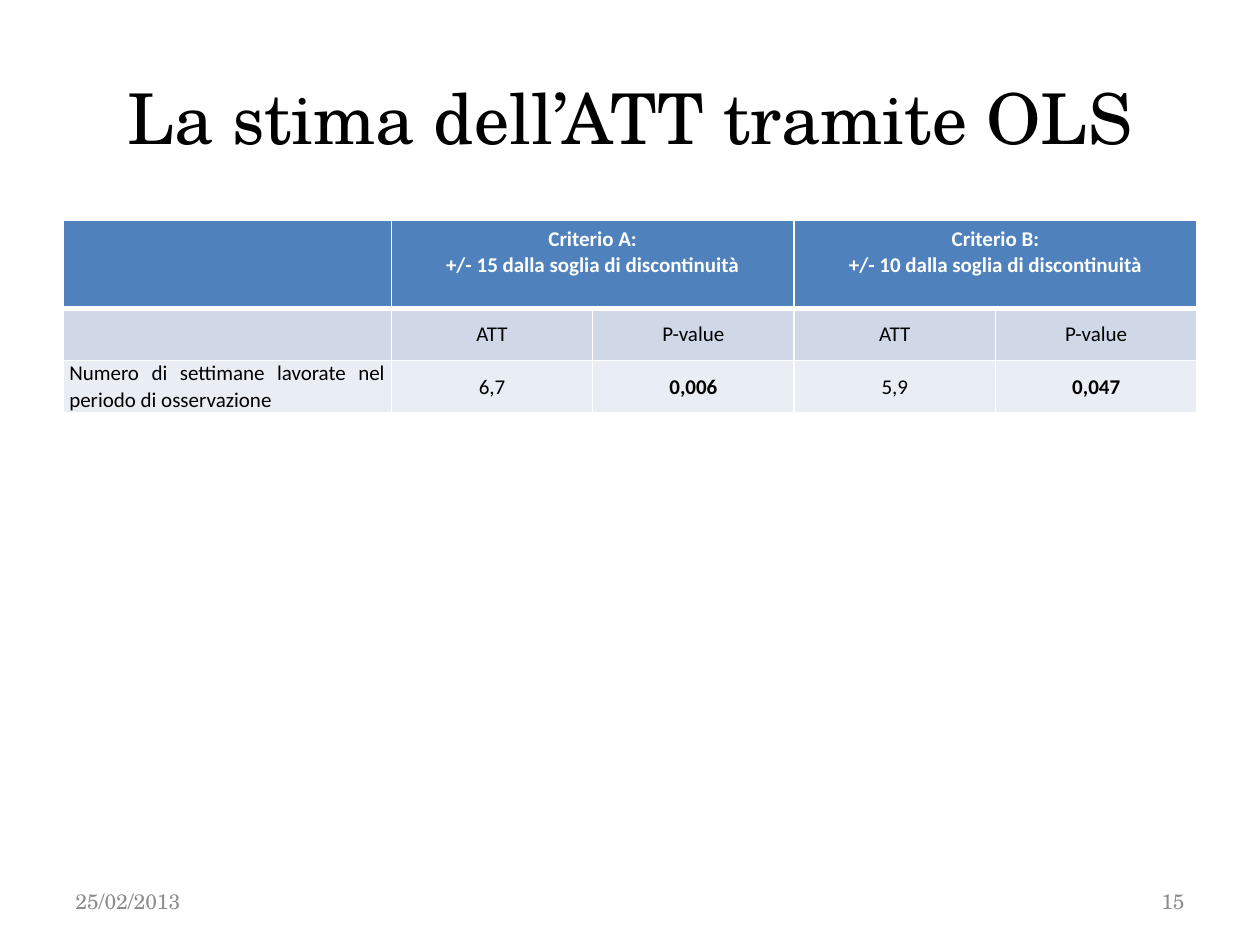
from lxml import etree
from pptx import Presentation
from pptx import util as u
from pptx.dml.color import RGBColor
from pptx.enum import text
from pptx.oxml.ns import qn

COLORS = {"black": "000000", "white": "FFFFFF", "grey": "8C8C8C",
          "header": "4F81BD", "band_dark": "D0D8E8", "band_light": "E9EDF4"}
SERIF, SANS = "TeX Gyre Schola", "Calibri"
LEFT, CENTER, RIGHT, JUSTIFY = (text.PP_ALIGN.LEFT, text.PP_ALIGN.CENTER,
                                text.PP_ALIGN.RIGHT, text.PP_ALIGN.JUSTIFY)


def write_lines(frame, lines, font, size, color, align, bold=False, spacing=None):
    for index, line in enumerate(lines):
        paragraph = frame.add_paragraph() if index else frame.paragraphs[0]
        paragraph.alignment = align
        paragraph.line_spacing = spacing
        run = paragraph.add_run()
        run.text = line
        run.font.name = font
        run.font.size = u.Pt(size)
        run.font.bold = bold
        run.font.color.rgb = RGBColor.from_string(COLORS[color])


def style_cell(cell, fill, bottom_width):
    properties = cell._tc.get_or_add_tcPr()
    for side in ("lnL", "lnR", "lnT", "lnB"):
        width = bottom_width if side == "lnB" else 1
        line = etree.SubElement(properties, qn(f"a:{side}"), w=str(u.Pt(width)))
        solid = etree.SubElement(line, qn("a:solidFill"))
        etree.SubElement(solid, qn("a:srgbClr"), val=COLORS["white"])
    cell.fill.solid()
    cell.fill.fore_color.rgb = RGBColor.from_string(COLORS[fill])


presentation = Presentation()
presentation.slide_width, presentation.slide_height = u.Pt(720), u.Pt(540)
slide = presentation.slides.add_slide(presentation.slide_layouts[6])

# Title, date and slide number
for words, left, top, width, height, size, color, align in (
    ("La stima dell’ATT tramite OLS", 36, 21.6, 648, 90, 40, "black", CENTER),
    ("25/02/2013", 36, 500.5, 168, 28.75, 12, "grey", LEFT),
    ("15", 516, 500.5, 168, 28.75, 12, "grey", RIGHT),
):
    box = slide.shapes.add_textbox(u.Pt(left), u.Pt(top), u.Pt(width), u.Pt(height))
    box.text_frame.word_wrap = True
    box.text_frame.vertical_anchor = text.MSO_ANCHOR.MIDDLE
    write_lines(box.text_frame, [words], SERIF, size, color, align)

# Table grid
column_widths = [187.6] + [115.1] * 4
row_heights = [50.4, 29.5, 29.5]
table = slide.shapes.add_table(3, 5, u.Pt(36), u.Pt(126), u.Pt(sum(column_widths)),
                               u.Pt(sum(row_heights))).table
for column, width in zip(table.columns, column_widths):
    column.width = u.Pt(width)
for row, height in zip(table.rows, row_heights):
    row.height = u.Pt(height)

# Header row
for cell in table.rows[0].cells:
    style_cell(cell, "header", 3)
for column, name, distance in ((1, "A", 15), (3, "B", 10)):
    cell = table.cell(0, column)
    cell.merge(table.cell(0, column + 1))
    lines = [f"Criterio {name}:", f"+/- {distance} dalla soglia di discontinuità"]
    write_lines(cell.text_frame, lines, SANS, 12, "white", CENTER, bold=True)

# Body rows
body = (
    ("band_dark", ["", "ATT", "P-value", "ATT", "P-value"]),
    ("band_light", ["Numero di settimane lavorate nel periodo di osservazione",
                    "6,7", "0,006", "5,9", "0,047"]),
)
for row, (fill, values) in enumerate(body, start=1):
    for column, value in enumerate(values):
        cell = table.cell(row, column)
        style_cell(cell, fill, 1)
        cell.vertical_anchor = text.MSO_ANCHOR.MIDDLE
        cell.margin_left = cell.margin_right = u.Pt(3.6)
        cell.margin_top = cell.margin_bottom = 0
        if value:
            write_lines(cell.text_frame, [value], SANS, 12, "black",
                        CENTER if column else JUSTIFY,
                        bold=row == 2 and column in (2, 4), spacing=u.Pt(15))

presentation.save("out.pptx")
